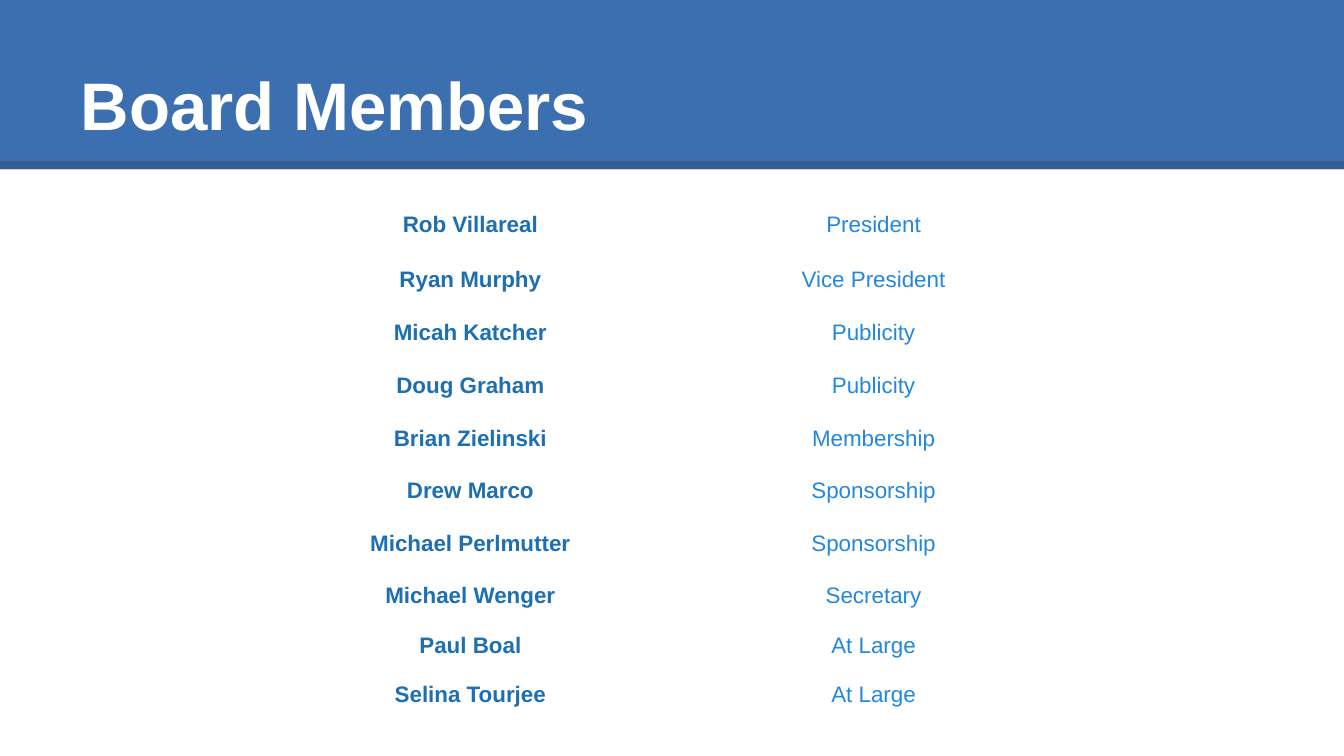
from lxml import etree
from pptx import Presentation
from pptx.dml.color import RGBColor
from pptx.enum.shapes import MSO_CONNECTOR, MSO_SHAPE
from pptx.enum.text import MSO_ANCHOR, MSO_AUTO_SIZE, PP_ALIGN
from pptx.oxml.ns import qn
from pptx.util import Inches, Pt

LEFT, CENTER = PP_ALIGN.LEFT, PP_ALIGN.CENTER
BOTTOM, TOP = MSO_ANCHOR.BOTTOM, MSO_ANCHOR.TOP
FONT = "Arial"
HEADING = "Board Members"
# Each entry is one table row; a cell may hold several lines.
MEMBERS = [
    ("Rob Villareal", "President"),
    ("Ryan Murphy", "Vice President"),
    ("Micah Katcher", "Publicity"),
    ("Doug Graham", "Publicity"),
    ("Brian Zielinski", "Membership"),
    ("Drew Marco", "Sponsorship"),
    ("Michael Perlmutter", "Sponsorship"),
    ("Michael Wenger\nPaul Boal\nSelina Tourjee", "Secretary\nAt Large\nAt Large"),
]
COLUMN_STYLES = [("1D6FB2", True), ("2388DB", False)]
ROW_HEIGHTS = [0.41, 0.39, 0.4] + [0.39] * 4 + [1.13]
LINE_GAP = 13.2


def rgb(value):
    return RGBColor.from_string(value)


def write(frame, text, size, color, bold, align, gap=0):
    frame.text = text
    for index, paragraph in enumerate(frame.paragraphs):
        paragraph.alignment = align
        if index:
            paragraph.space_before = Pt(gap)
        for run in paragraph.runs:
            run.font.name = FONT
            run.font.size = Pt(size)
            run.font.bold = bold
            run.font.color.rgb = rgb(color)


def set_margins(item):
    item.margin_left = item.margin_right = Inches(0.1)
    item.margin_top = item.margin_bottom = Inches(0.1)


def add_header(slide, width):
    band = slide.shapes.add_shape(MSO_SHAPE.RECTANGLE, 0, 0, width, Inches(1.26))
    band.shadow.inherit = False
    band.fill.solid()
    band.fill.fore_color.rgb = rgb("3C6FAF")
    band.line.fill.background()

    edge = slide.shapes.add_connector(
        MSO_CONNECTOR.STRAIGHT, 0, Inches(1.23), width, Inches(1.23))
    edge.line.width = Pt(4.5)
    edge.line.color.rgb = rgb("000000")
    properties = edge._element.spPr
    tint = properties.find(".//" + qn("a:srgbClr"))
    etree.SubElement(tint, qn("a:alpha"), val="15000")
    etree.SubElement(properties, qn("a:effectLst"))

    title = slide.shapes.title
    title.left, title.top = Inches(0.5), Inches(0.23)
    title.width, title.height = Inches(9), Inches(0.94)
    frame = title.text_frame
    frame.auto_size = MSO_AUTO_SIZE.NONE
    frame.vertical_anchor = BOTTOM
    set_margins(frame)
    write(frame, HEADING, 36, "FFFFFF", True, LEFT)
    slide.shapes._spTree.append(title._element)  # in front of the band


def add_members(slide):
    table = slide.shapes.add_table(
        len(MEMBERS), len(COLUMN_STYLES), Inches(2), Inches(1.48),
        Inches(6), Inches(sum(ROW_HEIGHTS))).table
    table.first_row = table.horz_banding = False
    for row, height, entry in zip(table.rows, ROW_HEIGHTS, MEMBERS):
        row.height = Inches(height)
        for cell, text, (color, bold) in zip(row.cells, entry, COLUMN_STYLES):
            cell.fill.background()
            cell.vertical_anchor = TOP
            set_margins(cell)
            write(cell.text_frame, text, 12, color, bold, CENTER, LINE_GAP)


def main():
    deck = Presentation()
    deck.slide_width = Inches(10)
    deck.slide_height = deck.slide_width * 9 // 16
    slide = deck.slides.add_slide(deck.slide_layouts[5])
    add_header(slide, deck.slide_width)
    add_members(slide)
    deck.save("out.pptx")


if __name__ == "__main__":
    main()
